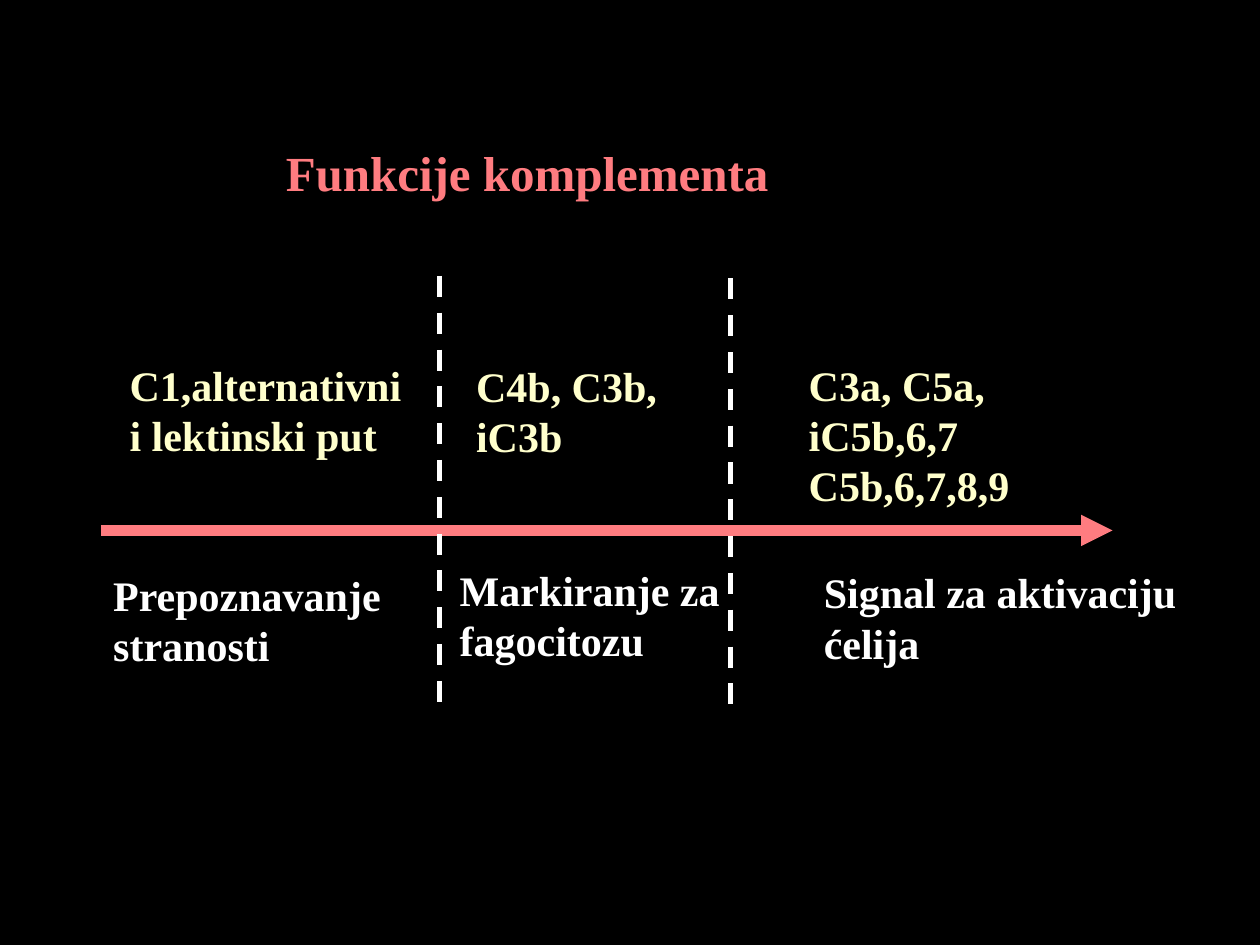
import pptx
import pptx.dml.color
import pptx.enum.dml
import pptx.enum.shapes
import pptx.enum.text
import pptx.oxml.ns
import pptx.util
from lxml import etree
from pptx.util import Inches

CORAL, CREAM, WHITE, BLACK = "FF7C80", "FFFFCC", "FFFFFF", "000000"


def color(hex_value):
    return pptx.dml.color.RGBColor.from_string(hex_value)


def add_xml(parent, tag, **attributes):
    return etree.SubElement(parent, pptx.oxml.ns.qn(tag), attributes)


class SlideBuilder:
    font_name = "Times New Roman"

    def __init__(self, slide, background):
        self.slide = slide
        fill = slide.background.fill
        fill.solid()
        fill.fore_color.rgb = color(background)

    def text(self, lines, left, top, width, height, hex_value, size=24):
        shape = self.slide.shapes.add_textbox(
            Inches(left), Inches(top), Inches(width), Inches(height))
        frame = shape.text_frame
        frame.word_wrap = False
        frame.auto_size = pptx.enum.text.MSO_AUTO_SIZE.SHAPE_TO_FIT_TEXT
        frame.text = "\n".join(lines)
        font_format = {"name": self.font_name, "size": pptx.util.Pt(size), "bold": True}
        for paragraph in frame.paragraphs:
            for run in paragraph.runs:
                for name, value in font_format.items():
                    setattr(run.font, name, value)
                run.font.color.rgb = color(hex_value)

    def line(self, start, end, hex_value, width, dash=None, arrow=False):
        connector = self.slide.shapes.add_connector(
            pptx.enum.shapes.MSO_CONNECTOR.STRAIGHT,
            *(Inches(value) for value in (*start, *end)))
        connector.line.color.rgb = color(hex_value)
        line_format = {"width": pptx.util.Pt(width), "dash_style": dash}
        for name, value in line_format.items():
            setattr(connector.line, name, value)
        if arrow:
            add_xml(connector.line._get_or_add_ln(), "a:tailEnd", type="triangle")
        add_xml(connector._element.spPr, "a:effectLst")


def main():
    presentation = pptx.Presentation()
    presentation.slide_width = Inches(10)
    presentation.slide_height = Inches(7.5)
    slide = presentation.slides.add_slide(presentation.slide_layouts[6])
    builder = SlideBuilder(slide, BLACK)

    builder.text(["Funkcije komplementa"], 2.17, 1.08, 4.08, 0.57, CORAL, size=28)
    builder.line((0.8, 4.21), (8.83, 4.21), CORAL, 6, arrow=True)

    divider_height = 3.45
    for left, top in ((3.49, 2.19), (5.8, 2.21)):
        builder.line((left, top), (left, top + divider_height), WHITE, 3,
                     dash=pptx.enum.dml.MSO_LINE.DASH)

    components = [
        (["C1,alternativni", "i lektinski put"], 0.93, 2.8, 2.46, 0.91),
        (["C4b, C3b,", "iC3b"], 3.68, 2.81, 1.65, 0.91),
        (["C3a, C5a,", "iC5b,6,7", "C5b,6,7,8,9"], 6.32, 2.8, 1.81, 1.31),
    ]
    functions = [
        (["Prepoznavanje", "stranosti"], 0.8, 4.47, 2.35, 0.91),
        (["Markiranje za", "fagocitozu"], 3.55, 4.43, 2.28, 0.91),
        (["Signal za aktivaciju", "ćelija"], 6.44, 4.45, 3.02, 0.91),
    ]
    for labels, hex_value in ((components, CREAM), (functions, WHITE)):
        for label in labels:
            builder.text(*label, hex_value)

    presentation.save("out.pptx")


if __name__ == "__main__":
    main()
